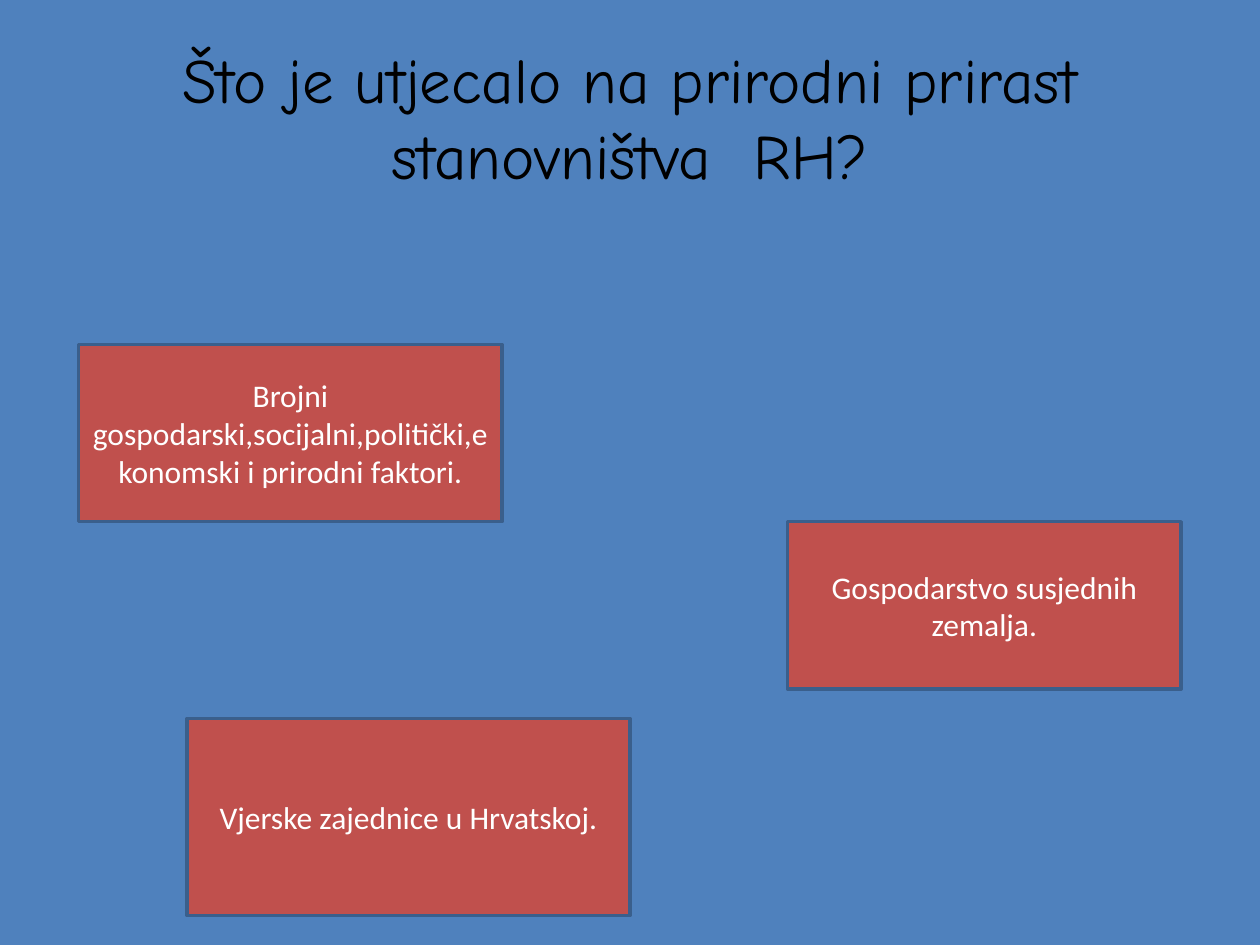
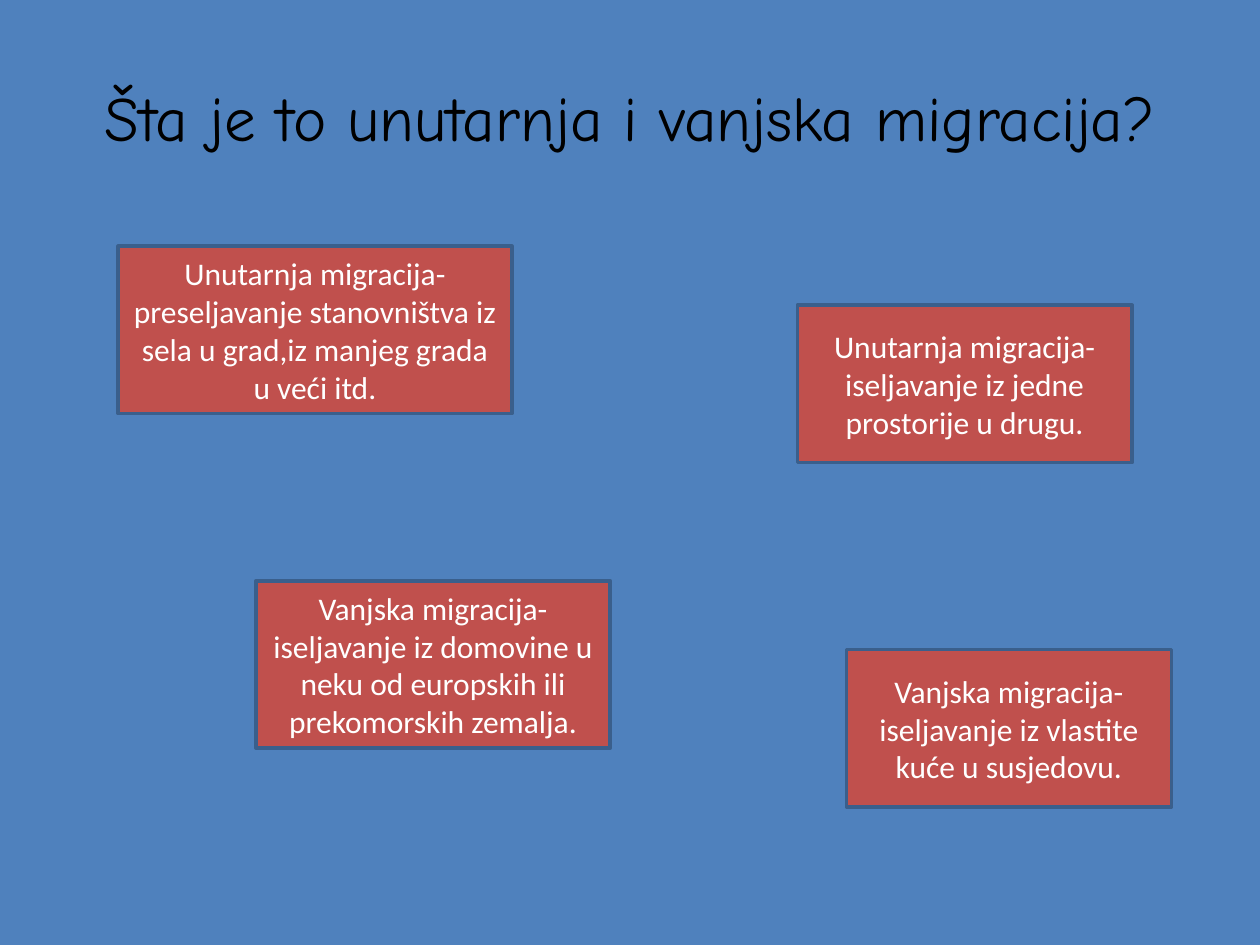
from pptx import Presentation
from pptx.dml.color import RGBColor
from pptx.enum.shapes import MSO_SHAPE
from pptx.enum.text import MSO_ANCHOR, PP_ALIGN
from pptx.util import Inches, Pt

BUTTON = MSO_SHAPE.ACTION_BUTTON_CUSTOM
CENTER = PP_ALIGN.CENTER
MIDDLE = MSO_ANCHOR.MIDDLE
TITLE_ONLY = 5
BACKGROUND, BUTTON_FILL, BUTTON_LINE = "4F81BD", "C0504D", "3A5F8C"
TITLE_STYLE = dict(font="Comic Neue", size=36, color="000000")
ANSWER_STYLE = dict(font="Calibri", size=18, color="FFFFFF")

# Each answer: text, then left, top, width and height in grid cells
QUESTIONS = [
    ("Što je utjecalo na prirodni prirast stanovništva  RH?", [
        ("Brojni gospodarski,socijalni,politički,ekonomski i prirodni faktori.",
         8, 35, 43, 18),
        ("Gospodarstvo susjednih zemalja.", 80, 53, 40, 17),
        ("Vjerske zajednice u Hrvatskoj.", 19, 73, 45, 20),
    ]),
    ("Šta je to unutarnja i vanjska migracija?", [
        ("Unutarnja migracija-preseljavanje stanovništva iz sela u grad,"
         "iz manjeg grada u veći itd.", 12, 25, 40, 17),
        ("Unutarnja migracija-iseljavanje iz jedne prostorije u drugu.",
         81, 31, 34, 16),
        ("Vanjska migracija-iseljavanje iz domovine u neku od europskih ili "
         "prekomorskih zemalja.", 26, 59, 36, 17),
        ("Vanjska migracija-iseljavanje iz vlastite kuće u susjedovu.",
         86, 66, 33, 16),
    ]),
]


def rgb(color):
    return RGBColor.from_string(color)


def write(shape, text, font, size, color):
    tf = shape.text_frame
    tf.word_wrap = True
    tf.vertical_anchor = MIDDLE
    p = tf.paragraphs[0]
    p.alignment = CENTER
    r = p.add_run()
    r.text = text
    r.font.name = font
    r.font.size = Pt(size)
    r.font.color.rgb = rgb(color)


prs = Presentation()
prs.slide_width, prs.slide_height = Inches(10), Inches(7.5)
W, H = prs.slide_width, prs.slide_height
cell = W // 128

for question, answers in QUESTIONS:
    s = prs.slides.add_slide(prs.slide_layouts[TITLE_ONLY])
    s.background.fill.solid()
    s.background.fill.fore_color.rgb = rgb(BACKGROUND)

    title = s.shapes.title
    title.left, title.top = int(W * 0.05), int(H * 0.04)
    title.width, title.height = int(W * 0.9), H // 6
    write(title, question, **TITLE_STYLE)

    for answer, *box in answers:
        sp = s.shapes.add_shape(BUTTON, *(n * cell for n in box))
        sp.shadow.inherit = False
        sp.fill.solid()
        sp.fill.fore_color.rgb = rgb(BUTTON_FILL)
        sp.line.color.rgb = rgb(BUTTON_LINE)
        sp.line.width = Pt(2)
        write(sp, answer, **ANSWER_STYLE)

prs.save("out.pptx")
